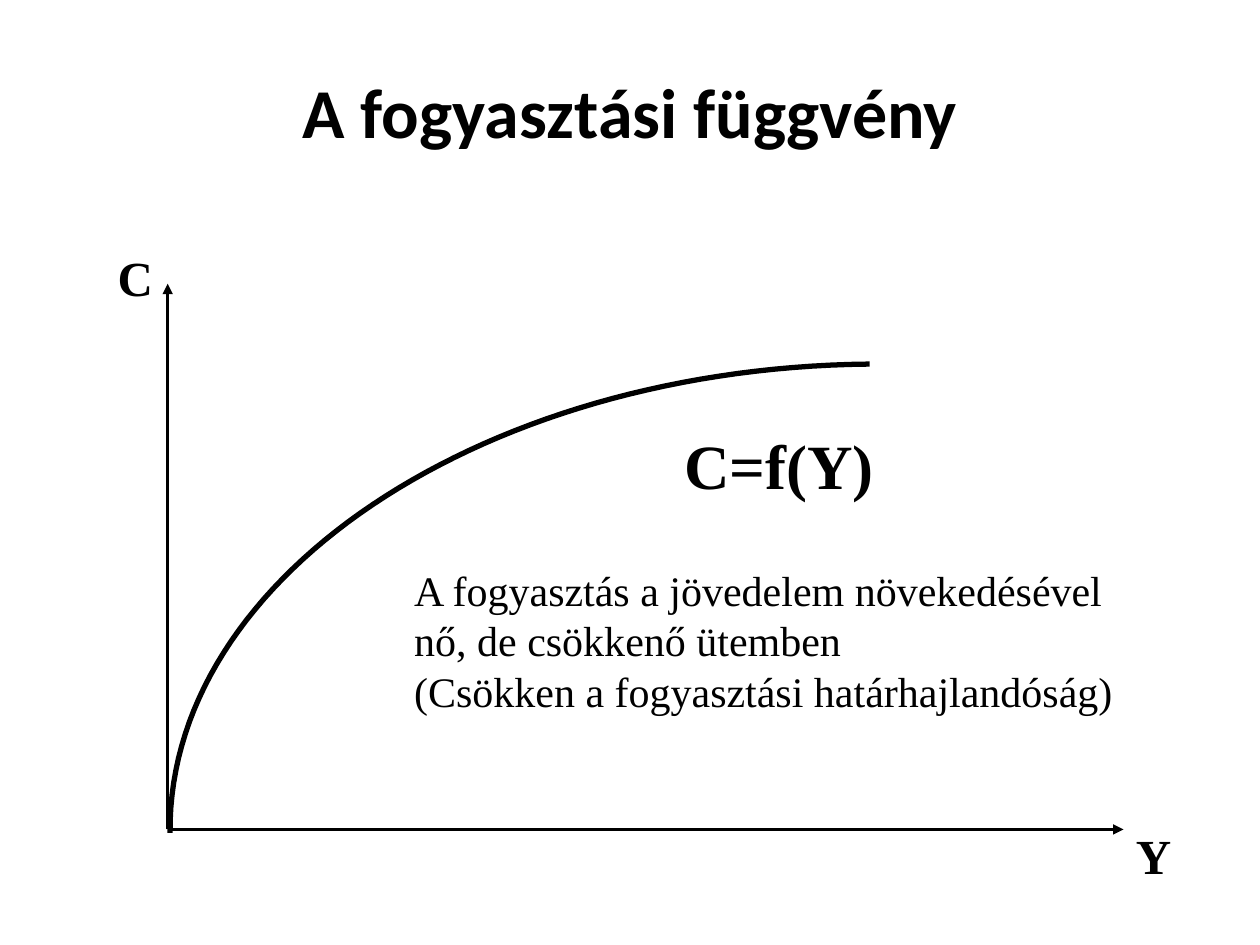
from lxml import etree
from pptx import Presentation
from pptx.dml.color import RGBColor
from pptx.enum.shapes import MSO_CONNECTOR
from pptx.enum.text import MSO_ANCHOR, MSO_AUTO_SIZE, PP_ALIGN
from pptx.oxml.ns import qn
from pptx.util import Cm, Pt

STRAIGHT = MSO_CONNECTOR.STRAIGHT
TOP, MIDDLE = MSO_ANCHOR.TOP, MSO_ANCHOR.MIDDLE
LEFT, CENTER = PP_ALIGN.LEFT, PP_ALIGN.CENTER
NO_FIT, GROW = MSO_AUTO_SIZE.NONE, MSO_AUTO_SIZE.SHAPE_TO_FIT_TEXT

BLACK = "000000"
SERIF = "Times New Roman"
ORIGIN = (3.38, 16.72)
CURVE = [(3.43, 16.79), (3.38, 11.66), (9.68, 7.42), (17.53, 7.34)]
CURVE_STEPS = 60


def rgb(hex_color):
    return RGBColor.from_string(hex_color)


def add_text(s, text, x, y, w, h, size=28, font=SERIF, bold=False, color=BLACK,
             align=LEFT, anchor=TOP, wrap=True, fit=GROW):
    """Add a text box with one paragraph for each line of text."""
    tf = s.shapes.add_textbox(Cm(x), Cm(y), Cm(w), Cm(h)).text_frame
    tf.word_wrap = wrap
    tf.auto_size = fit
    tf.vertical_anchor = anchor
    tf.text = text
    for p in tf.paragraphs:
        p.alignment = align
        p.font.size = Pt(size)
        p.font.name = font
        p.font.bold = bold
        p.font.color.rgb = rgb(color)


def set_line(sp, width, color=BLACK):
    sp.line.color.rgb = rgb(color)
    sp.line.width = Pt(width)


def add_axis(s, end):
    """Draw an arrow from the origin to end."""
    points = [Cm(v) for v in (*ORIGIN, *end)]
    axis = s.shapes.add_connector(STRAIGHT, *points)
    set_line(axis, 1.5)
    etree.SubElement(axis.line._get_or_add_ln(), qn("a:tailEnd"), type="triangle")
    etree.SubElement(axis._element.spPr, qn("a:effectLst"))


def bezier_point(controls, t):
    """Return the point at t, from 0 to 1, as a pair of lengths."""
    weights = ((1 - t) ** 3, 3 * t * (1 - t) ** 2, 3 * t ** 2 * (1 - t), t ** 3)
    return tuple(Cm(sum(w * v for w, v in zip(weights, axis)))
                 for axis in zip(*controls))


def add_curve(s, controls, width):
    """Draw a cubic Bezier curve as an open outline."""
    points = [bezier_point(controls, i / CURVE_STEPS) for i in range(CURVE_STEPS + 1)]
    builder = s.shapes.build_freeform(*points[0])
    builder.add_line_segments(points[1:], close=False)
    sp = builder.convert_to_shape()
    sp.shadow.inherit = False
    sp.fill.background()
    set_line(sp, width)


def main():
    prs = Presentation()
    prs.slide_width, prs.slide_height = Cm(25.4), Cm(19.05)
    s = prs.slides.add_slide(prs.slide_layouts[6])

    add_text(s, "A fogyasztási függvény", 1.9, 0.64, 21.6, 3.18, size=40,
             font="Calibri", bold=True, align=CENTER, anchor=MIDDLE, fit=NO_FIT)

    add_axis(s, (22.65, ORIGIN[1]))
    add_axis(s, (ORIGIN[0], 5.72))
    add_text(s, "Y", 22.65, 16.51, 1.27, 1.45, bold=True)
    add_text(s, "C", 2.12, 4.87, 1.24, 1.45, bold=True, wrap=False)

    add_curve(s, CURVE, 3)
    add_text(s, "C=f(Y)", 13.54, 8.47, 8.68, 1.78, size=36, bold=True)
    add_text(s, "A fogyasztás a jövedelem növekedésével nő, de csökkenő ütemben\n"
                "(Csökken a fogyasztási határhajlandóság)",
             8.1, 11.25, 15.4, 3.33, size=24)

    prs.save("out.pptx")


if __name__ == "__main__":
    main()
